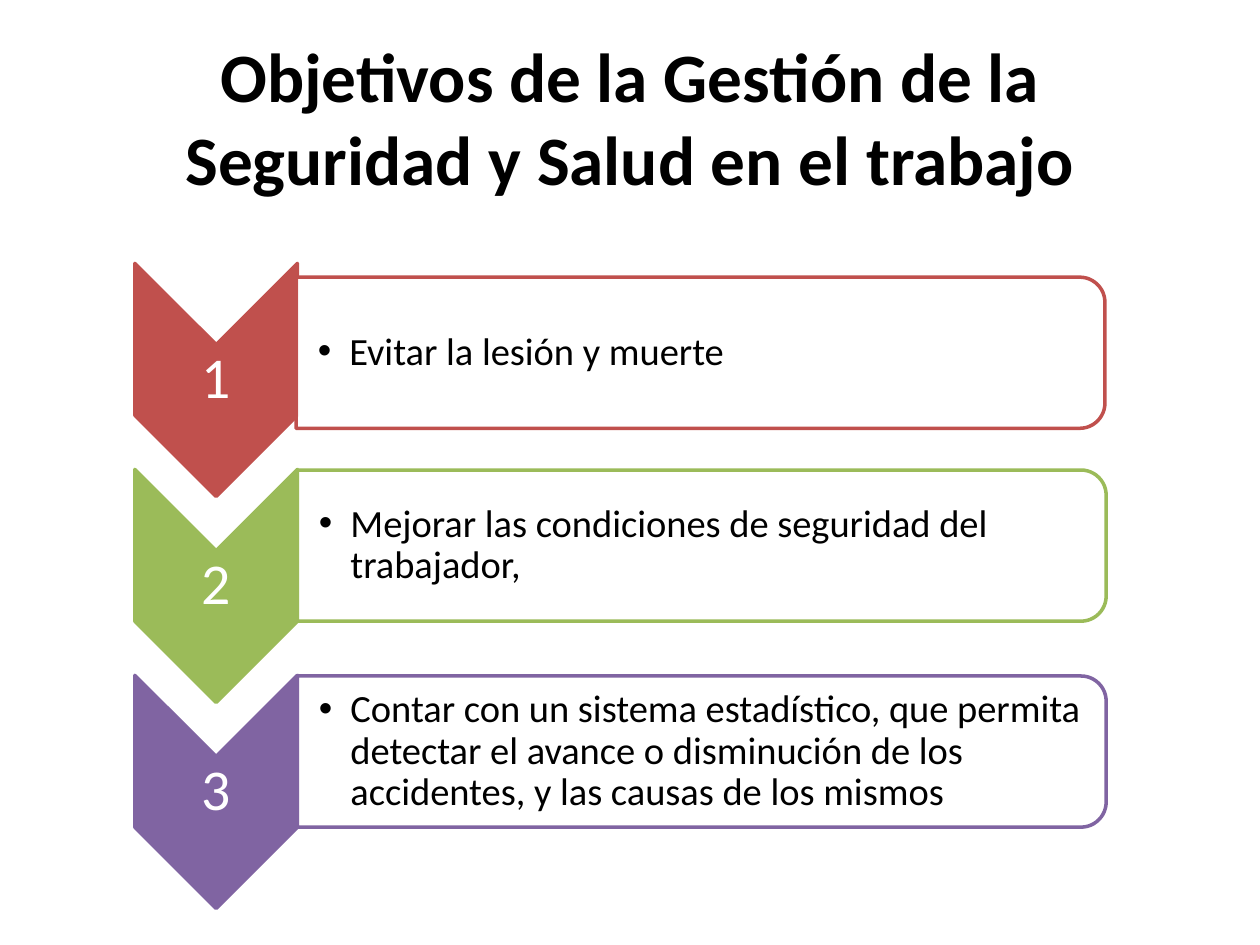
from lxml.etree import SubElement
from pptx import Presentation
from pptx.dml.color import RGBColor
from pptx.enum.shapes import MSO_SHAPE as Shape
from pptx.enum.text import MSO_ANCHOR as Anchor, PP_ALIGN as Align
from pptx.oxml.ns import qn
from pptx.util import Pt

# Content: one row per objective, with its colour and panel offset (x, y)
TITLE = "Objetivos de la Gestión de la Seguridad y Salud en el trabajo"
OBJECTIVES = [
    ("1", "Evitar la lesión y muerte", "C0504D", (-0.7, 7.5)),
    ("2", "Mejorar las condiciones de seguridad del trabajador,", "9BBB59", (0, 0)),
    ("3", "Contar con un sistema estadístico, que permita detectar el avance o "
          "disminución de los accidentes, y las causas de los mismos", "8064A2", (0, 0)),
]
THEME = dict(font="Calibri", text="000000", light="FFFFFF",
             title=39.6, number=33, body=22, line=2, panel_alpha=90)

# Geometry in points; chevrons and panels are drawn upright, then turned 90°
CHEVRON = (133.2, 92.9)
PANEL = (86.4, 462.2)
NUMBER_BOX = (92.9, 39.6)
BODY_BOX = (458.6, 77.8)
CHEVRON_X, FIRST_Y, PITCH = 123.5, 217.1, 117.7
PANEL_X, PANEL_RISE = 401, 23
BODY_X = 399.3


def box_at(cx, cy, size):
    """Left, top, width and height of a box centred on (cx, cy)."""
    w, h = size
    return [Pt(v) for v in (cx - w / 2, cy - h / 2, w, h)]


def add_bullet(p, indent):
    pPr = p._p.get_or_add_pPr()
    pPr.set("marL", str(Pt(indent)))
    pPr.set("indent", str(-Pt(indent)))
    SubElement(pPr, qn("a:buFont")).set("typeface", "Arial")
    SubElement(pPr, qn("a:buChar")).set("char", "•")


def add_text(slide, text, box, *, size, color=THEME["text"], bold=False,
             align=Align.CENTER, insets=(1.4, 1.4, 1.4, 1.4),
             spacing=None, after=0, bullet=None):
    tf = slide.shapes.add_textbox(*box).text_frame
    tf.word_wrap = True
    tf.vertical_anchor = Anchor.MIDDLE
    tf.margin_left, tf.margin_top, tf.margin_right, tf.margin_bottom = map(Pt, insets)
    p = tf.paragraphs[0]
    p.alignment = align
    p.space_after = Pt(after)
    if spacing:
        p.line_spacing = spacing
    if bullet:
        add_bullet(p, bullet)
    r = p.add_run()
    r.text = text
    r.font.name, r.font.size, r.font.bold = THEME["font"], Pt(size), bold
    r.font.color.rgb = RGBColor.from_string(color)


def add_turned_shape(slide, kind, box, fill, line, alpha=None):
    sp = slide.shapes.add_shape(kind, *box)
    sp.rotation = 90
    sp.shadow.inherit = False
    sp.fill.solid()
    sp.fill.fore_color.rgb = RGBColor.from_string(fill)
    sp.line.color.rgb = RGBColor.from_string(line)
    sp.line.width = Pt(THEME["line"])
    if alpha:
        clr = sp._element.spPr.find(qn("a:solidFill"))[0]
        SubElement(clr, qn("a:alpha")).set("val", str(alpha * 1000))


def add_objective(slide, index, number, text, color, offset):
    cy = FIRST_Y + index * PITCH
    dx, dy = offset
    panel_y = cy - PANEL_RISE + dy

    # Numbered chevron
    add_turned_shape(slide, Shape.CHEVRON, box_at(CHEVRON_X, cy, CHEVRON), color, color)
    add_text(slide, number, box_at(CHEVRON_X, cy, NUMBER_BOX), size=THEME["number"],
             color=THEME["light"], spacing=0.9, after=11.55)

    # Panel with the objective
    add_turned_shape(slide, Shape.ROUND_2_SAME_RECTANGLE,
                     box_at(PANEL_X + dx, panel_y, PANEL),
                     THEME["light"], color, THEME["panel_alpha"])
    add_text(slide, text, box_at(BODY_X + dx, panel_y, BODY_BOX), size=THEME["body"],
             align=Align.LEFT, insets=(12.3, 1.4, 1.4, 1.4),
             spacing=0.9, after=3.3, bullet=18)


def main():
    prs = Presentation()
    prs.slide_width, prs.slide_height = Pt(720), Pt(540)
    s = prs.slides.add_slide(prs.slide_layouts[6])
    add_text(s, TITLE, box_at(360, 66.6, (648, 90)), size=THEME["title"],
             bold=True, insets=(7.2, 3.6, 7.2, 3.6))
    for i, objective in enumerate(OBJECTIVES):
        add_objective(s, i, *objective)
    prs.save("out.pptx")


if __name__ == "__main__":
    main()
